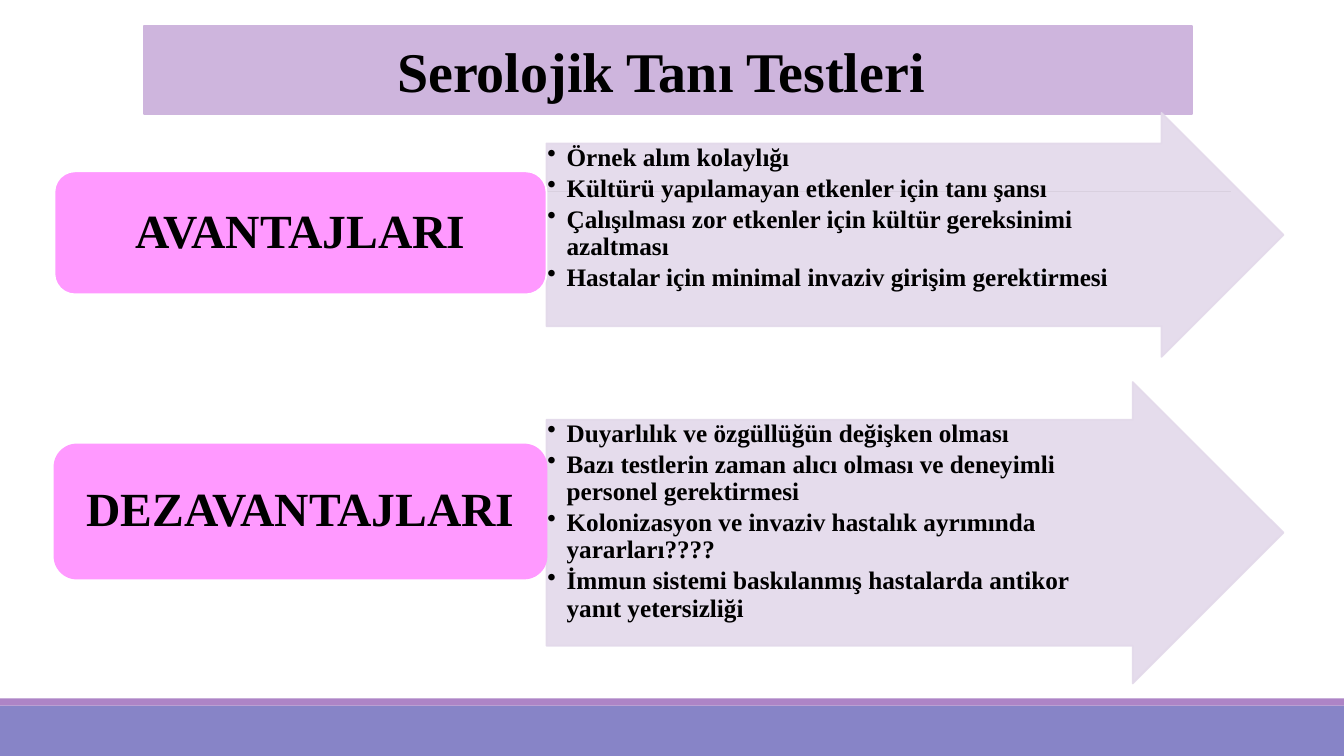
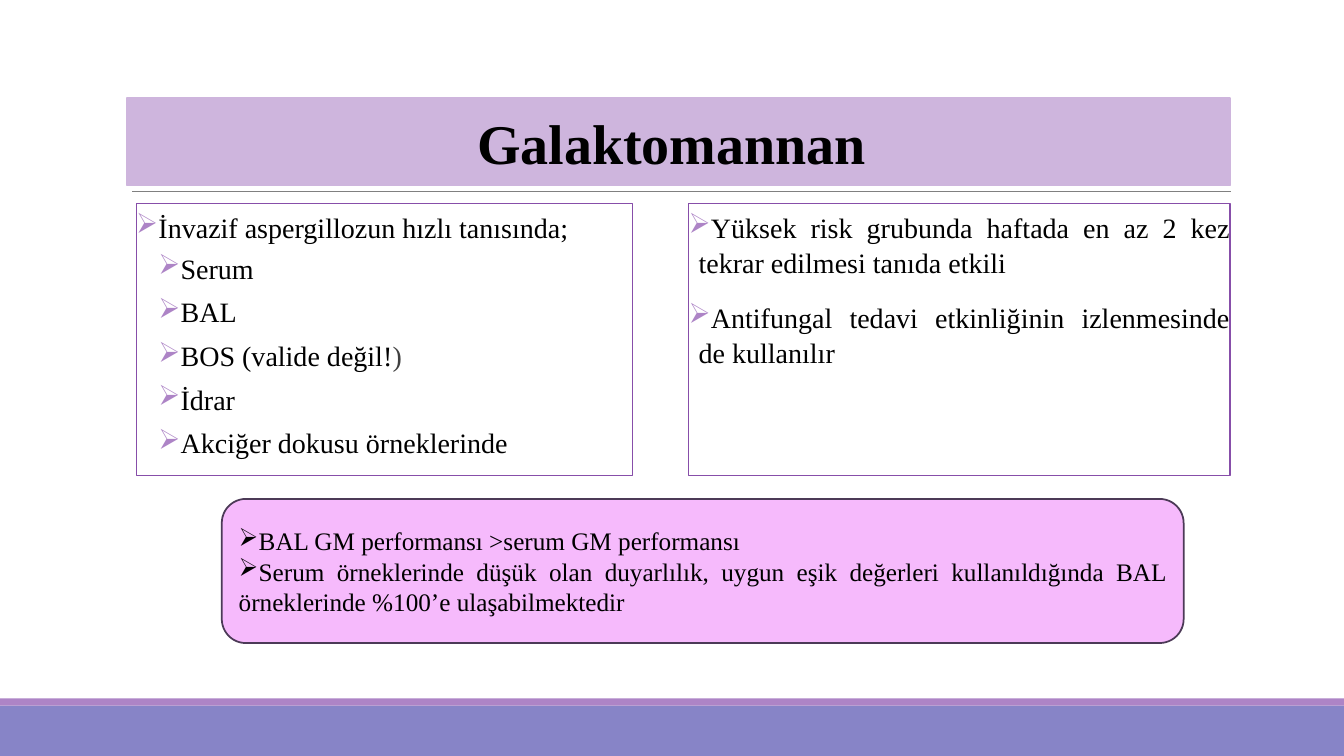
import pptx
import pptx.util
import pptx.dml.color
import pptx.enum.shapes
import pptx.enum.text
import pptx.oxml
import pptx.oxml.ns
import lxml.etree

Inches = pptx.util.Inches
Pt = pptx.util.Pt
RGB = pptx.dml.color.RGBColor.from_string
qn = pptx.oxml.ns.qn
SHAPE = pptx.enum.shapes.MSO_SHAPE
ALIGN = pptx.enum.text.PP_ALIGN
ANCHOR = pptx.enum.text.MSO_ANCHOR

FONT = "Times New Roman"
COLORS = {
    "text": "000000", "soft_text": "404040", "rule": "808080",
    "footer": "8784C7", "accent": "AD84C6", "title": "CEB5DD",
    "arrow": "E3D9EA", "label": "FF99FF", "white": "FFFFFF",
    "box_line": "874EA9", "note": "F6BAFC", "note_line": "4C3A57",
}


def paint(sp, fill, line=None, width=1.25):
    if fill:
        sp.fill.solid()
        sp.fill.fore_color.rgb = RGB(COLORS[fill])
    else:
        sp.fill.background()
    if line:
        sp.line.color.rgb = RGB(COLORS[line])
        sp.line.width = Pt(width)
    else:
        sp.line.fill.background()


def write(tf, lines, size, bold=False, align=ALIGN.LEFT, bullet=None, bullet_color="text",
          margin=0, indent=0, spacing=1.0, before=0, after=0):
    tf.word_wrap = True
    tf.text = "\n".join(lines)
    for i, p in enumerate(tf.paragraphs):
        p.alignment = align
        p.line_spacing = spacing
        p.space_before = Pt(before if i else 0)
        p.space_after = Pt(after)
        if bullet:
            pPr = p._p.get_or_add_pPr()
            pPr.set("marL", str(Inches(margin)))
            pPr.set("indent", str(Inches(indent)))
            clr = lxml.etree.SubElement(pPr, qn("a:buClr"))
            lxml.etree.SubElement(clr, qn("a:srgbClr"), val=COLORS[bullet_color])
            lxml.etree.SubElement(pPr, qn("a:buChar"), char=bullet)
        for r in p.runs:
            r.font.name = FONT
            r.font.size = Pt(size)
            r.font.bold = bold
            r.font.color.rgb = RGB(COLORS["text"])


prs = pptx.Presentation()
prs.slide_width = Inches(13.33)
prs.slide_height = Inches(7.5)
layout = prs.slide_layouts[5]

slides = []
for text, left, top, width in [
    ("Serolojik Tanı Testleri ", 1.43, 0.26, 10.39),
    ("Galaktomannan ", 1.26, 0.97, 10.94),
]:
    s = prs.slides.add_slide(layout)
    title = s.shapes.title
    title.left, title.top = Inches(left), Inches(top)
    title.width, title.height = Inches(width), Inches(0.87)
    geom = lxml.etree.SubElement(title.element.spPr, qn("a:prstGeom"), prst="roundRect")
    lxml.etree.SubElement(geom, qn("a:avLst"))
    paint(title, "title", "title")
    write(title.text_frame, [text], 40, True, ALIGN.CENTER)
    title.text_frame.auto_size = pptx.enum.text.MSO_AUTO_SIZE.NONE
    title.text_frame.vertical_anchor = ANCHOR.MIDDLE
    slides.append(s)

tests, galactomannan = slides

for top, height, color in [(7, 0.5, "footer"), (6.93, 0.07, "accent")]:
    band = tests.shapes.add_shape(SHAPE.RECTANGLE, 0, Inches(top), prs.slide_width, Inches(height))
    band.shadow.inherit = False
    paint(band, color)
    layout.shapes.element.append(band.element)

rule = tests.shapes.add_connector(
    pptx.enum.shapes.MSO_CONNECTOR.STRAIGHT, Inches(1.31), Inches(1.9), Inches(12.21), Inches(1.9))
rule.line.color.rgb = RGB(COLORS["rule"])
rule.line.width = Pt(0.5)
lxml.etree.SubElement(rule.element.spPr, qn("a:effectLst"))
layout.shapes.element.append(rule.element)

groups = [
    ("AVANTAJLARI", 1.7, 1.22, "white", 1.12, 2.42, [
        "Örnek alım kolaylığı",
        "Kültürü yapılamayan etkenler için tanı şansı",
        "Çalışılması zor etkenler için kültür gereksinimi azaltması",
        "Hastalar için minimal invaziv girişim gerektirmesi",
    ]),
    ("DEZAVANTAJLARI", 4.41, 1.33, "label", 3.79, 2.99, [
        "Duyarlılık ve özgüllüğün değişken olması",
        "Bazı testlerin zaman alıcı olması ve deneyimli personel gerektirmesi",
        "Kolonizasyon ve invaziv hastalık ayrımında yararları????",
        "İmmun sistemi baskılanmış hastalarda antikor yanıt yetersizliği",
    ]),
]
for name, label_top, label_height, outline, arrow_top, arrow_height, points in groups:
    arrow = tests.shapes.add_shape(
        SHAPE.RIGHT_ARROW, Inches(5.42), Inches(arrow_top), Inches(7.31), Inches(arrow_height))
    arrow.adjustments[0] = 0.75
    arrow.adjustments[1] = 0.5
    arrow.shadow.inherit = False
    paint(arrow, "arrow", "arrow")
    for clr in arrow.element.spPr.iter(qn("a:srgbClr")):
        lxml.etree.SubElement(clr, qn("a:alpha"), val="90000")
    tf = arrow.text_frame
    tf.margin_left = tf.margin_top = tf.margin_bottom = Inches(0.01)
    tf.margin_right = Inches(arrow_height / 4)
    tf.vertical_anchor = ANCHOR.TOP
    write(tf, points, 18, True, bullet="•", margin=0.19, indent=-0.19, spacing=0.9, after=2.7)

    label = tests.shapes.add_shape(
        SHAPE.ROUNDED_RECTANGLE, Inches(0.54), Inches(label_top), Inches(4.88), Inches(label_height))
    label.shadow.inherit = False
    paint(label, "label", outline)
    label.text_frame.vertical_anchor = ANCHOR.MIDDLE
    write(label.text_frame, [name], 34, True, ALIGN.CENTER, spacing=0.9)

columns = [
    (1.35, 4.92, [
        "İnvazif aspergillozun hızlı tanısında;",
        "Serum",
        "BAL",
        "BOS (valide değil!",
        "İdrar",
        "Akciğer dokusu örneklerinde",
    ]),
    (6.83, 5.37, [
        "Yüksek risk grubunda haftada en az 2 kez tekrar edilmesi tanıda etkili",
        "Antifungal tedavi etkinliğinin izlenmesinde de kullanılır",
    ]),
]
frames = []
for left, width, lines in columns:
    box = galactomannan.shapes.add_textbox(Inches(left), Inches(2.02), Inches(width), Inches(2.7))
    paint(box, None, "box_line", 0.75)
    tf = box.text_frame
    tf.margin_left = tf.margin_right = 0
    write(tf, lines, 20, align=ALIGN.JUSTIFY, bullet="➢", bullet_color="accent",
          margin=0.1, indent=-0.1, spacing=1.05, before=12, after=2)
    frames.append(tf)

samples = frames[0].paragraphs[1:]
for p in samples:
    p.level = 1
    p.space_before = Pt(2)
    p.space_after = Pt(4)
    pPr = p._p.get_or_add_pPr()
    pPr.set("marL", str(Inches(0.42)))
    pPr.set("indent", str(Inches(-0.2)))

r = samples[2].add_run()
r.text = ")"
r.font.name = FONT
r.font.size = Pt(20)
r.font.color.rgb = RGB(COLORS["soft_text"])

note = galactomannan.shapes.add_shape(
    SHAPE.ROUNDED_RECTANGLE, Inches(2.2), Inches(4.95), Inches(9.54), Inches(1.43))
note.shadow.inherit = False
paint(note, "note", "note_line")
note.text_frame.vertical_anchor = ANCHOR.MIDDLE
write(note.text_frame, [
    "BAL GM performansı >serum GM performansı",
    "Serum örneklerinde düşük olan duyarlılık, uygun eşik değerleri kullanıldığında "
    "BAL örneklerinde %100’e ulaşabilmektedir",
], 18, align=ALIGN.JUSTIFY, bullet="➢")

prs.save("out.pptx")
